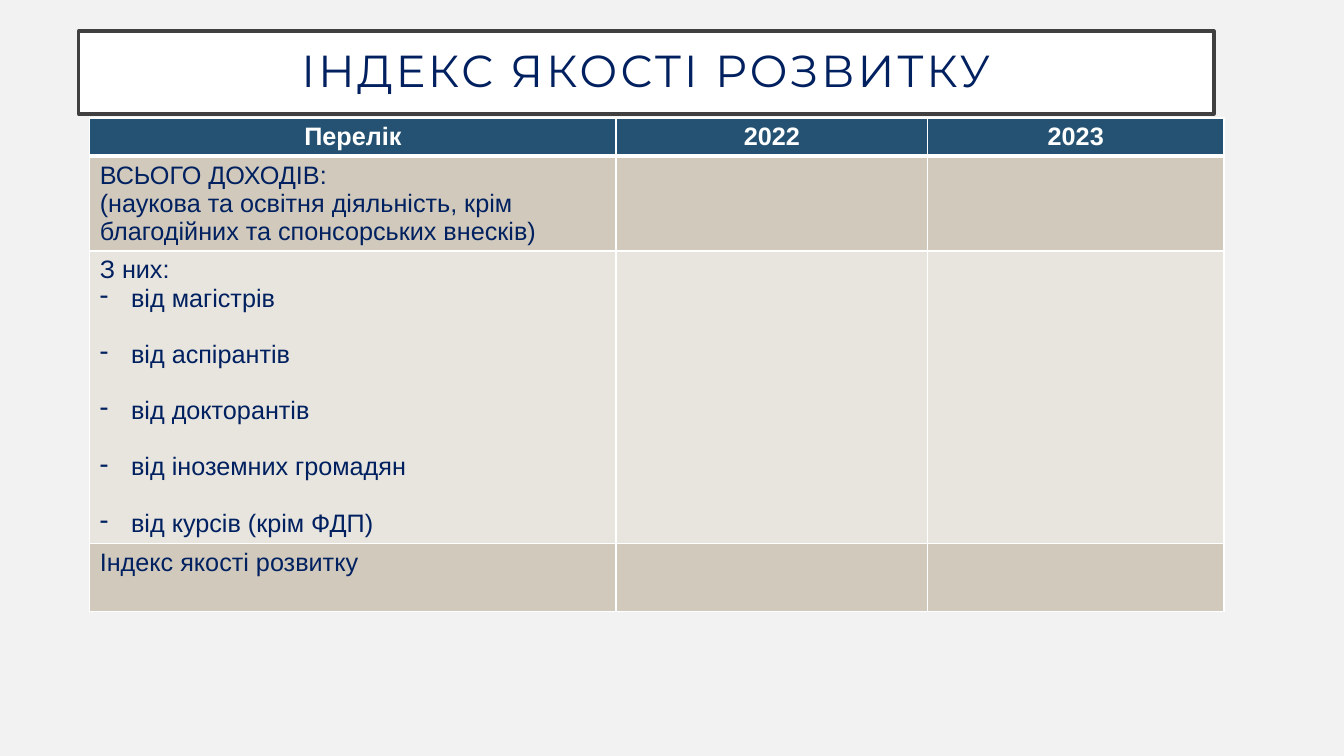
from lxml import etree
from pptx import Presentation, util as u
from pptx.dml.color import RGBColor
from pptx.enum import text as t
from pptx.oxml import ns

HUES = {"back": "F2F2F2", "white": "FFFFFF", "frame": "404040", "navy": "002060",
        "head": "255272", "dark": "D1CABC", "light": "E8E5DE"}
HEADS = ["Перелік", "2022", "2023"]
ROWS = [
    ["ВСЬОГО ДОХОДІВ:",
     "(наукова та освітня діяльність, крім благодійних та спонсорських внесків)"],
    ["З них:", "- від магістрів", "- від аспірантів", "- від докторантів",
     "- від іноземних громадян", "- від курсів (крім ФДП)"],
    ["Індекс якості розвитку"],
]
WIDTHS = [5.22, 3.09, 2.94]
HEIGHTS = [0.37, 0.94, 2.9, 0.68]


def hue(name):
    return RGBColor.from_string(HUES[name])


def paint(fill, name):
    fill.solid()
    fill.fore_color.rgb = hue(name)


def write(par, words, size=18, font="Arial", color="navy", bold=False,
          align=t.PP_ALIGN.LEFT, track=0):
    """Put words in a paragraph; track is letter spacing in points."""
    par.alignment = align
    run = par.add_run()
    run.text = words
    run.font.size = u.Pt(size)
    run.font.name = font
    run.font.bold = bold
    run.font.color.rgb = hue(color)
    if track:
        run.font._element.set("spc", str(track * 100))


def dash(par):
    """Give a paragraph a hanging dash bullet."""
    props = par._p.get_or_add_pPr()
    props.set("marL", str(u.Inches(0.31)))
    props.set("indent", str(-u.Inches(0.31)))
    etree.SubElement(props, ns.qn("a:buChar")).set("char", "-")


def edge(cell, base):
    """Draw white cell borders, the bottom one base points wide."""
    props = cell._tc.get_or_add_tcPr()
    for side, width in zip("LRTB", (1, 1, 1, base)):
        line = etree.SubElement(props, ns.qn("a:ln" + side), w=str(u.Pt(width)))
        solid = etree.SubElement(line, ns.qn("a:solidFill"))
        etree.SubElement(solid, ns.qn("a:srgbClr"), val=HUES["white"])


def title(slide, left, top, width, height):
    box = slide.shapes.title
    box.left, box.top = u.Inches(left), u.Inches(top)
    box.width, box.height = u.Inches(width), u.Inches(height)
    paint(box.fill, "white")
    box.line.color.rgb = hue("frame")
    box.line.width = u.Pt(2.5)
    frame = box.text_frame
    frame.auto_size = t.MSO_AUTO_SIZE.NONE
    frame.word_wrap = True
    frame.vertical_anchor = t.MSO_ANCHOR.MIDDLE
    frame.margin_left = frame.margin_right = u.Inches(0.2)
    frame.margin_top = frame.margin_bottom = u.Inches(0.2)
    par = frame.paragraphs[0]
    par.line_spacing = 0.9
    write(par, "ІНДЕКС ЯКОСТІ РОЗВИТКУ", size=32, font="Montserrat",
          align=t.PP_ALIGN.CENTER, track=2)


def fill_cell(cell, lines):
    frame = cell.text_frame
    for i, words in enumerate(lines):
        par = frame.paragraphs[0] if i == 0 else frame.add_paragraph()
        if words.startswith("- "):
            if i > 1:
                par.space_before = u.Pt(20)
            dash(par)
        write(par, words.removeprefix("- "))


def table(slide, left, top):
    grid = slide.shapes.add_table(
        len(HEIGHTS), len(WIDTHS), u.Inches(left), u.Inches(top),
        u.Inches(sum(WIDTHS)), u.Inches(sum(HEIGHTS))).table
    for col, width in zip(grid.columns, WIDTHS):
        col.width = u.Inches(width)
    for r, height in enumerate(HEIGHTS):
        grid.rows[r].height = u.Inches(height)
        tone = "head" if r == 0 else "dark" if r % 2 else "light"
        for cell in grid.rows[r].cells:
            edge(cell, 3 if r == 0 else 1)
            paint(cell.fill, tone)
    for c, words in enumerate(HEADS):
        write(grid.cell(0, c).text_frame.paragraphs[0], words, color="white",
              bold=True, align=t.PP_ALIGN.CENTER)
    for r, lines in enumerate(ROWS, 1):
        fill_cell(grid.cell(r, 0), lines)


def main():
    deck = Presentation()
    deck.slide_width, deck.slide_height = u.Inches(13.33), u.Inches(7.5)
    slide = deck.slides.add_slide(deck.slide_layouts[5])
    paint(slide.background.fill, "back")
    title(slide, 0.78, 0.31, 11.26, 0.82)
    table(slide, 0.89, 1.17)
    deck.save("out.pptx")


if __name__ == "__main__":
    main()
